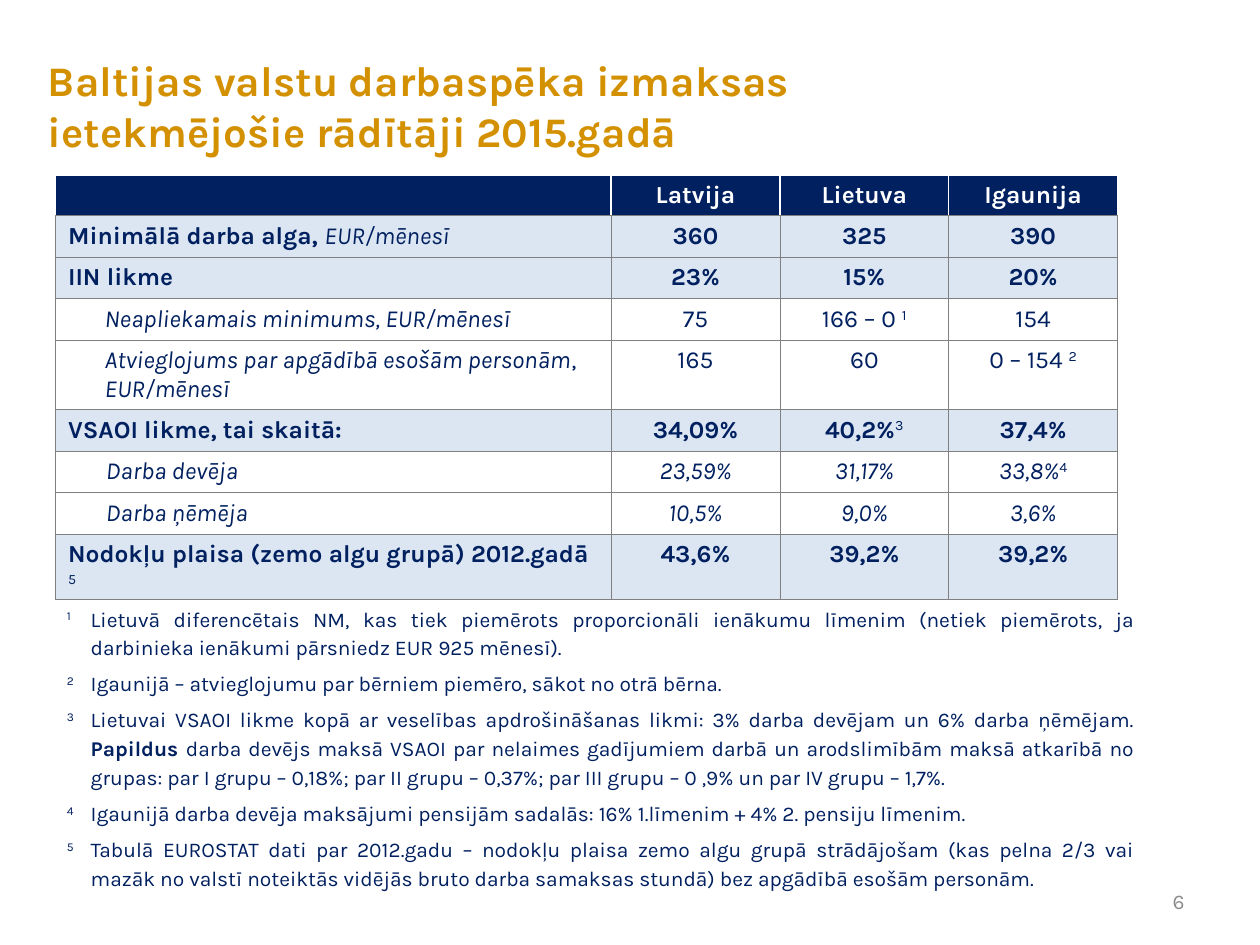
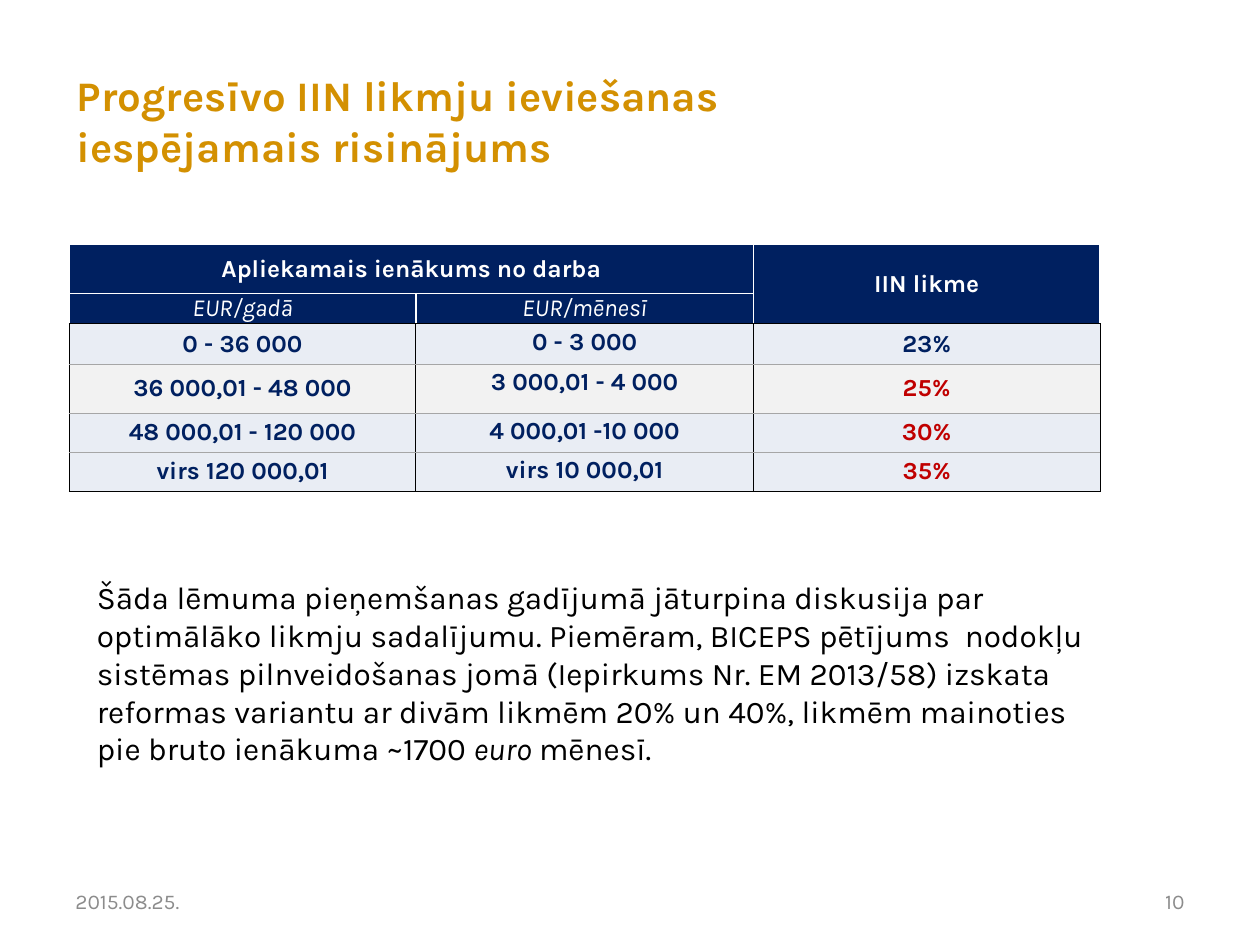
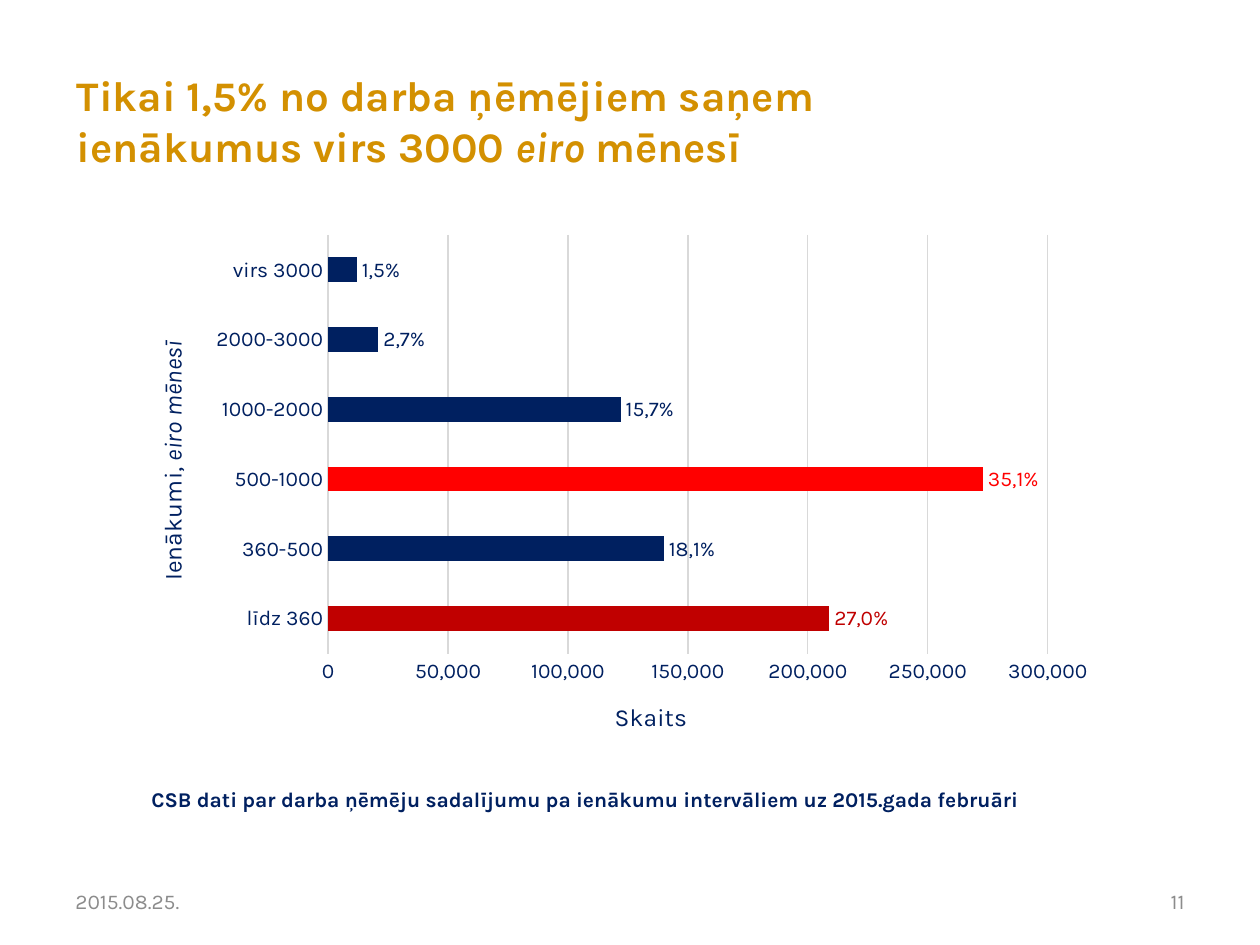
from dataclasses import dataclass

from lxml.etree import SubElement
from pptx import Presentation
from pptx.chart.data import CategoryChartData as ChartData
from pptx.dml.color import RGBColor as RGB
from pptx.enum.chart import XL_CHART_TYPE as Kind
from pptx.enum.chart import XL_LABEL_POSITION as Spot
from pptx.enum.chart import XL_TICK_MARK as Tick
from pptx.enum.text import MSO_ANCHOR as Anchor
from pptx.enum.text import MSO_AUTO_SIZE as Fit
from pptx.enum.text import PP_ALIGN as Align
from pptx.oxml.ns import qn
from pptx.util import Inches, Pt


@dataclass(frozen=True)
class Theme:
    font: str = "Karla"
    gold: str = "D39001"
    navy: str = "002060"
    white: str = "FFFFFF"
    black: str = "000000"
    gray: str = "8C8C8C"
    dark: str = "C00000"
    red: str = "FF0000"
    blue: str = "DCE6F2"
    pale: str = "E9EDF4"
    ash: str = "F2F2F2"
    rule: str = "808080"
    soft: str = "A6A6A6"
    grid: str = "D9D9D9"
    head: int = 24
    lead: int = 18
    cell: int = 14
    note: int = 12


T = Theme()
BOLD, PLAIN = {"bold": True}, {"bold": False}
ITAL, UP = {"ital": True}, {"bold": False, "ital": False, "up": True}
TITLE_BOX = (0.51, 0.6, 6.3, 0.71)
DATE = "2015.08.25."


# Text
def style(font, size=T.cell, color=T.navy, bold=False, ital=False):
    font.name, font.size = T.font, Pt(size)
    font.bold, font.italic = bold, ital
    font.color.rgb = RGB.from_string(color)


def write(para, text, align=Align.LEFT, space=None, after=None, left=0, hang=0, **form):
    """Fill a paragraph from a string or a list of strings and (string, format) pairs."""
    para.alignment = align
    para.space_before = Pt(0)
    if space:
        para.line_spacing = space
    if after:
        para.space_after = Pt(after)
    props = para._p.get_or_add_pPr()
    props.set("marL", str(Inches(left)))
    props.set("indent", str(Inches(-hang)))
    for part in [text] if isinstance(text, str) else text:
        words, extra = (part, {}) if isinstance(part, str) else part
        look = {**form, **extra}
        lift = look.pop("up", False)
        if not words:
            size = look.get("size", T.cell) * 100
            SubElement(para._p, qn("a:endParaRPr"), sz=str(size))
            continue
        run = para.add_run()
        run.text = words
        style(run.font, **look)
        if lift:
            run._r.get_or_add_rPr().set("baseline", "30000")


def place(shape, box):
    shape.left, shape.top, shape.width, shape.height = map(Inches, box)


def label(slide, box, text, anchor=Anchor.TOP, **form):
    frame = slide.shapes.add_textbox(*map(Inches, box)).text_frame
    frame.word_wrap, frame.vertical_anchor = True, anchor
    write(frame.paragraphs[0], text, **form)


def holder(shape, box, anchor):
    place(shape, box)
    shape.fill.solid()
    shape.fill.fore_color.rgb = RGB.from_string(T.white)
    frame = shape.text_frame
    frame.auto_size, frame.vertical_anchor = Fit.NONE, anchor
    return frame


def start(deck, layout, title, number, box=TITLE_BOX, date=None):
    """Add a slide with its title and footer."""
    slide = deck.slides.add_slide(deck.slide_layouts[layout])
    frame = holder(slide.shapes.title, box, Anchor.MIDDLE)
    write(frame.paragraphs[0], title, size=T.head, color=T.gold, bold=True)
    foot = {"anchor": Anchor.MIDDLE, "size": T.note, "color": T.gray}
    if date:
        label(slide, (0.5, 6.95, 2.33, 0.4), date, **foot)
    label(slide, (7.17, 6.95, 2.33, 0.4), number, align=Align.RIGHT, **foot)
    return slide


def notes(shape, box, items):
    """Write numbered footnotes into the body placeholder."""
    frame = holder(shape, box, Anchor.TOP)
    for i, item in enumerate(items):
        para = frame.add_paragraph() if i else frame.paragraphs[0]
        props = para._p.get_or_add_pPr()
        SubElement(props, qn("a:buNone"))
        tabs = SubElement(props, qn("a:tabLst"))
        SubElement(tabs, qn("a:tab"), pos=str(Inches(0.2)), algn="l")
        write(para, [(str(i + 1), UP), "\t", *item], align=Align.JUSTIFY,
              space=1.15, after=4, left=0.19, hang=0.19, size=T.note)


# Tables
def grid(slide, box, cols, rows):
    frame = slide.shapes.add_table(len(rows), len(cols), *map(Inches, box))
    table = frame.table
    for col, wide in zip(table.columns, cols):
        col.width = Inches(wide)
    for row, tall in zip(table.rows, rows):
        row.height = Inches(tall)
    return table


def rim(cell, left, right, top, bottom):
    """Draw the four borders, each a (colour, points) pair."""
    props = cell._tc.get_or_add_tcPr()
    for i, (side, (color, wide)) in enumerate(zip("LRTB", (left, right, top, bottom))):
        line = SubElement(props, qn(f"a:ln{side}"), w=str(Pt(wide)))
        fill = SubElement(line, qn("a:solidFill"))
        SubElement(fill, qn("a:srgbClr"), val=color)
        props.insert(i, line)


def paint(cell, text, fill, edges, anchor=Anchor.TOP, pad=0.1, top=0, **form):
    cell.fill.solid()
    cell.fill.fore_color.rgb = RGB.from_string(fill)
    cell.vertical_anchor = anchor
    cell.margin_left = cell.margin_right = Inches(pad)
    cell.margin_top, cell.margin_bottom = Inches(top), 0
    write(cell.text_frame.paragraphs[0], text, **form)
    rim(cell, *edges)


def costs(slide):
    """Table of labour cost factors; each row has a kind, a name and three values."""
    rows = [
        ("head", "", "Latvija", "Lietuva", "Igaunija"),
        ("main", ["Minimālā darba alga, ", ("EUR/mēnesī", {**PLAIN, **ITAL})],
         "360", "325", "390"),
        ("main", "IIN likme", "23%", "15%", "20%"),
        ("sub", "Neapliekamais minimums, EUR/mēnesī", "75", ["166 – 0 ", ("1", UP)], "154"),
        ("sub", ["Atvieglojums par apgādībā esošām personām", (", ", {"ital": False}),
                 "EUR/mēnesī"], "165", "60", ["0 – 154 ", ("2", UP)]),
        ("main", "VSAOI likme, tai skaitā:", "34,09%", ["40,2%", ("3", UP)], "37,4%"),
        ("part", "Darba devēja", "23,59%", "31,17%", ["33,8%", ("4", UP)]),
        ("part", "Darba ņēmēja", "10,5%", "9,0%", "3,6%"),
        ("main", ["Nodokļu plaisa (zemo algu grupā) 2012.gadā ", ("5", UP)],
         "43,6%", "39,2%", "39,2%"),
    ]
    # Fill, text colour, bold, indent, slanted values
    looks = {"head": (T.navy, T.white, True, 0, False),
             "main": (T.blue, T.navy, True, 0, False),
             "sub": (T.white, T.navy, False, 0.29, False),
             "part": (T.white, T.navy, False, 0.3, True)}
    table = grid(slide, (0.44, 1.39, 8.43, 3.35), [4.41, 1.34, 1.34, 1.34],
                 [0.32, *[0.33] * 3, 0.55, *[0.33] * 3, 0.5])
    thin, light = (T.rule, 0.5), (T.white, 1)
    for r, (kind, *texts) in enumerate(rows):
        fill, color, bold, left, slant = looks[kind]
        edges = (light, light, light, thin) if kind == "head" else (thin,) * 4
        for c, text in enumerate(texts):
            paint(table.cell(r, c), text, fill, edges, top=0.05, color=color, bold=bold,
                  left=0 if c else left, ital=slant if c else left > 0,
                  align=Align.CENTER if c else Align.LEFT)


def rates(slide):
    """Table of income bands and tax rates."""
    heads = [("Apliekamais ienākums no darba", "", "IIN likme"),
             ("EUR/gadā", "EUR/mēnesī", "")]
    bands = [("0 - 36 000", "0 - 3 000", "23%"),
             ("36 000,01 - 48 000", "3 000,01 - 4 000", "25%"),
             ("48 000,01 - 120 000", "4 000,01 -10 000", "30%"),
             ("virs 120 000,01", "virs 10 000,01", "35%")]
    table = grid(slide, (0.55, 1.94, 8.18, 1.96), [2.75, 2.68, 2.75],
                 [0.39, 0.24, 0.32, 0.39, 0.31, 0.31])
    light, ink, soft = (T.white, 1), (T.black, 0.5), (T.soft, 0.5)
    mid = {"anchor": Anchor.MIDDLE, "pad": 0}
    for r, texts in enumerate(heads):
        for c, text in enumerate(texts):
            base = ink if r or c == 2 else light
            paint(table.cell(r, c), text, T.navy, (light, light, light, base),
                  align=Align.CENTER, color=T.white, bold=r == 0, ital=r == 1, **mid)
    table.cell(0, 0).merge(table.cell(0, 1))
    table.cell(0, 2).merge(table.cell(1, 2))
    last = len(bands) - 1
    for r, texts in enumerate(bands):
        edges = (ink, ink, soft if r else ink, ink if r == last else soft)
        for c, text in enumerate(texts):
            form = {"pad": 0.07, "space": 1.15} if c == 1 else mid
            paint(table.cell(r + 2, c), text, T.ash if r == 1 else T.pale, edges,
                  align=Align.CENTER, bold=True,
                  color=T.dark if c == 2 and r else T.navy, **form)


# Chart
def lay(node, inner=False, **spots):
    """Fix the place of a chart part, as shares of the chart."""
    old = node.find(qn("c:layout"))
    if old is not None:
        node.remove(old)
    layout = SubElement(node, qn("c:layout"))
    node.insert(0 if inner else 1, layout)
    hand = SubElement(layout, qn("c:manualLayout"))
    if inner:
        SubElement(hand, qn("c:layoutTarget"), val="inner")
    for axis in "xy":
        SubElement(hand, qn(f"c:{axis}Mode"), val="edge")
    for key, share in spots.items():
        SubElement(hand, qn(f"c:{key}"), val=str(share))


def name(axis, text, x, y, turn=0):
    frame = axis.axis_title.text_frame
    write(frame.paragraphs[0], text, align=Align.CENTER)
    frame._txBody.bodyPr.set("rot", str(turn * 60000))
    lay(axis.axis_title._element, x=x, y=y)


def bars(slide, box, rows):
    data = ChartData(number_format="#,##0")
    data.categories = [row[0] for row in rows]
    data.add_series("Series 1", [row[1] for row in rows])
    chart = slide.shapes.add_chart(Kind.BAR_CLUSTERED, *map(Inches, box), data).chart
    chart.has_legend = chart.has_title = False
    style(chart.font, size=T.note, color=T.black)
    plot = chart.plots[0]
    plot.gap_width, plot.vary_by_categories = 182, False

    # Axes
    cats, vals = chart.category_axis, chart.value_axis
    for axis in (cats, vals):
        axis.major_tick_mark = axis.minor_tick_mark = Tick.NONE
        style(axis.tick_labels.font, size=T.note)
    lines = vals.major_gridlines.format.line
    for line in (cats.format.line, lines):
        line.color.rgb, line.width = RGB.from_string(T.grid), Pt(0.75)
    vals.format.line.fill.background()
    vals.minimum_scale, vals.maximum_scale, vals.major_unit = 0, 300000, 50000
    vals.tick_labels.number_format = "#,##0"
    vals.tick_labels.number_format_is_linked = False
    name(cats, ["Ienākumi, ", ("eiro mēnesī", ITAL)], 0.02, 0.21, turn=-90)
    name(vals, "Skaits", 0.49, 0.88)
    lay(chart._chartSpace.chart.plotArea, inner=True, x=0.2, y=0.02, w=0.74, h=0.78)

    # Bars and their shares
    series = plot.series[0]
    series.format.fill.solid()
    series.format.fill.fore_color.rgb = RGB.from_string(T.navy)
    for i, (_, _, share, color) in enumerate(rows):
        point = series.points[i]
        if color != T.navy:
            point.format.fill.solid()
            point.format.fill.fore_color.rgb = RGB.from_string(color)
        tag = point.data_label
        write(tag.text_frame.paragraphs[0], share, size=T.note, color=color)
        tag.position = Spot.OUTSIDE_END


def main():
    deck = Presentation()
    deck.slide_width, deck.slide_height = Inches(10), Inches(7.5)

    # Labour costs
    slide = start(deck, 1, "Baltijas valstu darbaspēka izmaksas ietekmējošie rādītāji 2015.gadā",
                  "6", box=(0.28, 0.52, 6.38, 0.63))
    costs(slide)
    notes(slide.placeholders[1], (0.43, 4.73, 8.68, 2.42), [
        ["Lietuvā diferencētais NM, kas tiek piemērots proporcionāli ienākumu līmenim "
         "(netiek piemērots, ja darbinieka ienākumi pārsniedz EUR 925 mēnesī)."],
        ["Igaunijā – atvieglojumu par bērniem piemēro, sākot no otrā bērna."],
        ["Lietuvai VSAOI likme kopā ar veselības apdrošināšanas likmi: 3% darba devējam "
         "un 6% darba ņēmējam. ", ("Papildus ", BOLD),
         "darba devējs maksā VSAOI par nelaimes gadījumiem darbā un arodslimībām maksā "
         "atkarībā no grupas: par I grupu – 0,18%; par II grupu – 0,37%; "
         "par III grupu – 0 ,9% un par IV grupu – 1,7%."],
        ["Igaunijā darba devēja maksājumi pensijām sadalās: 16% 1.līmenim + 4% 2. "
         "pensiju līmenim."],
        ["Tabulā EUROSTAT dati par 2012.gadu – nodokļu plaisa zemo algu grupā strādājošam "
         "(kas pelna 2/3 vai mazāk no valstī noteiktās vidējās bruto darba samaksas stundā) "
         "bez apgādībā esošām personām."],
    ])

    # Progressive rates
    slide = start(deck, 5, "Progresīvo IIN likmju ieviešanas iespējamais risinājums",
                  "10", date=DATE)
    rates(slide)
    label(slide, (0.67, 4.54, 8.06, 1.92), [
        "Šāda lēmuma pieņemšanas gadījumā jāturpina diskusija par optimālāko likmju "
        "sadalījumu. Piemēram, BICEPS pētījums  nodokļu sistēmas pilnveidošanas jomā "
        "(Iepirkums Nr. EM 2013/58) izskata reformas variantu ar divām likmēm 20% un 40%, "
        "likmēm mainoties pie bruto ienākuma ~1700 ", ("euro", ITAL), " mēnesī."],
        size=T.lead, color=T.black)

    # Income spread
    slide = start(deck, 5, ["Tikai 1,5% no darba ņēmējiem saņem ienākumus virs 3000 ",
                            ("eiro", ITAL), " mēnesī"], "11", date=DATE)
    bars(slide, (1.06, 1.78, 7.72, 4.26), [
        ("līdz 360", 209000, "27,0%", T.dark),
        ("360-500", 140000, "18,1%", T.navy),
        ("500-1000", 273000, "35,1%", T.red),
        ("1000-2000", 122000, "15,7%", T.navy),
        ("2000-3000", 21000, "2,7%", T.navy),
        ("virs 3000", 12000, "1,5%", T.navy),
    ])
    label(slide, (0.67, 6.19, 7.95, 0.3),
          "CSB dati par darba ņēmēju sadalījumu pa ienākumu intervāliem uz 2015.gada februāri",
          align=Align.CENTER, size=T.note, bold=True)

    deck.save("out.pptx")


if __name__ == "__main__":
    main()
